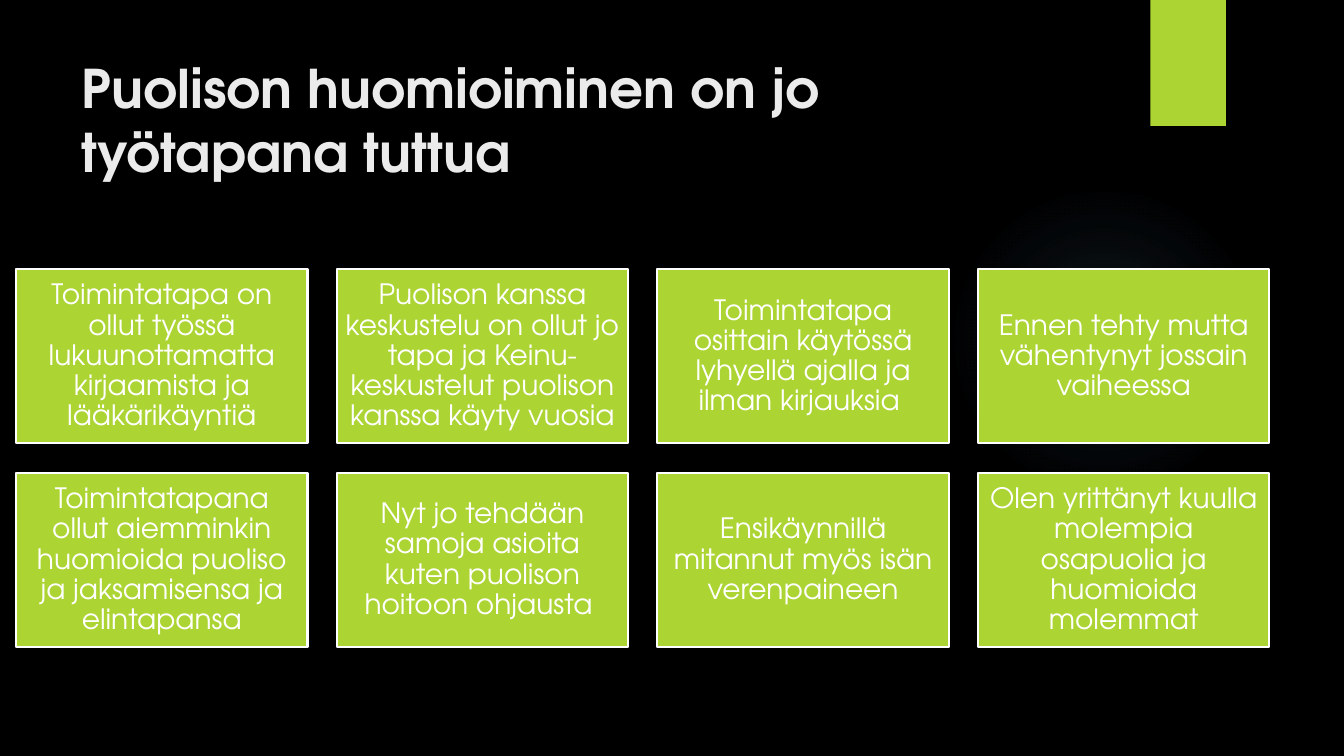
from dataclasses import dataclass

from lxml import etree
from pptx import Presentation
from pptx.dml.color import RGBColor
from pptx.enum.shapes import MSO_SHAPE as Preset
from pptx.enum.text import MSO_ANCHOR as Anchor, PP_ALIGN as Align
from pptx.oxml.ns import qn
from pptx.shapes.autoshape import Shape
from pptx.slide import Slide
from pptx.text.text import TextFrame
from pptx.util import Inches, Pt

FONT = "TeX Gyre Adventor"
BLACK, WHITE, LIGHT = "000000", "FFFFFF", "EBEBEB"
LIME, GLOW_BLUE = "ACD433", "7AC4F0"
COLUMNS = 4
CARD_LEFT, CARD_TOP = 0.16, 2.67
CARD_WIDTH, CARD_HEIGHT, CARD_GAP = 2.89, 1.73, 0.29
GLOW_STOPS = ((0, 7), (36, 6), (69, 0))


@dataclass(frozen=True)
class Box:
    left: float
    top: float
    width: float
    height: float

    def lengths(self) -> tuple[Inches, Inches, Inches, Inches]:
        return (Inches(self.left), Inches(self.top),
                Inches(self.width), Inches(self.height))


@dataclass(frozen=True)
class Card:
    text: str
    box: Box


def color(hex_code: str) -> RGBColor:
    return RGBColor.from_string(hex_code)


def format_text(frame: TextFrame, size: int, hex_code: str, bold: bool) -> None:
    for paragraph in frame.paragraphs:
        for run in paragraph.runs:
            run.font.name = FONT
            run.font.size = Pt(size)
            run.font.bold = bold
            run.font.color.rgb = color(hex_code)


def add_block(slide: Slide, preset: Preset, box: Box, fill: str) -> Shape:
    block = slide.shapes.add_shape(preset, *box.lengths())
    block.shadow.inherit = False
    block.fill.solid()
    block.fill.fore_color.rgb = color(fill)
    block.line.fill.background()
    return block


def add_glow(slide: Slide, box: Box) -> None:
    glow = add_block(slide, Preset.OVAL, box, GLOW_BLUE)
    gradient = etree.Element(qn("a:gradFill"), rotWithShape="1")
    stops = etree.SubElement(gradient, qn("a:gsLst"))
    for position, opacity in GLOW_STOPS:
        stop = etree.SubElement(stops, qn("a:gs"), pos=str(position * 1000))
        tint = etree.SubElement(stop, qn("a:srgbClr"), val=GLOW_BLUE)
        etree.SubElement(tint, qn("a:alpha"), val=str(opacity * 1000))
    path = etree.SubElement(gradient, qn("a:path"), {"path": "circle"})
    etree.SubElement(path, qn("a:fillToRect"),
                     l="50000", t="50000", r="50000", b="50000")
    properties = glow._element.spPr
    properties.replace(properties.find(qn("a:solidFill")), gradient)


def add_title(slide: Slide, text: str, box: Box) -> None:
    title = slide.shapes.title
    title.left, title.top, title.width, title.height = box.lengths()
    frame = title.text_frame
    frame.text = text
    frame.word_wrap = True
    frame.vertical_anchor = Anchor.TOP
    frame.paragraphs[0].alignment = Align.LEFT
    format_text(frame, 38, LIGHT, True)


def add_card(slide: Slide, card: Card) -> None:
    block = add_block(slide, Preset.RECTANGLE, card.box, LIME)
    block.line.color.rgb = color(WHITE)
    block.line.width = Pt(1.5)
    frame = block.text_frame
    frame.text = card.text
    frame.word_wrap = True
    frame.vertical_anchor = Anchor.MIDDLE
    frame.margin_left = frame.margin_right = Inches(0.08)
    frame.margin_top = frame.margin_bottom = Inches(0.08)
    frame.paragraphs[0].alignment = Align.CENTER
    frame.paragraphs[0].line_spacing = 0.9
    format_text(frame, 20, WHITE, False)


def card_box(index: int) -> Box:
    row, column = divmod(index, COLUMNS)
    return Box(CARD_LEFT + column * (CARD_WIDTH + CARD_GAP),
               CARD_TOP + row * (CARD_HEIGHT + CARD_GAP),
               CARD_WIDTH, CARD_HEIGHT)


EXPERIENCES = (
    "Toimintatapa on ollut työssä lukuunottamatta kirjaamista ja lääkärikäyntiä",
    "Puolison kanssa keskustelu on ollut jo tapa ja Keinu- keskustelut "
    "puolison kanssa käyty vuosia",
    "Toimintatapa osittain käytössä lyhyellä ajalla ja ilman kirjauksia ",
    "Ennen tehty mutta vähentynyt jossain vaiheessa",
    "Toimintatapana ollut aiemminkin huomioida puoliso ja jaksamisensa ja "
    "elintapansa",
    "Nyt jo tehdään samoja asioita kuten puolison hoitoon ohjausta ",
    "Ensikäynnillä mitannut myös isän verenpaineen",
    "Olen yrittänyt kuulla molempia osapuolia ja huomioida molemmat",
)


def main() -> None:
    deck = Presentation()
    deck.slide_width, deck.slide_height = Inches(13.33), Inches(7.5)
    slide = deck.slides.add_slide(deck.slide_layouts.get_by_name("Title Only"))
    slide.background.fill.solid()
    slide.background.fill.fore_color.rgb = color(BLACK)

    add_glow(slide, Box(9.41, 1.83, 3.08, 3.08))
    add_block(slide, Preset.RECTANGLE, Box(11.41, 0, 0.75, 1.25), LIME)
    add_title(slide, "Puolison huomioiminen on jo työtapana tuttua",
              Box(0.71, 0.5, 10.2, 1.53))
    for index, text in enumerate(EXPERIENCES):
        add_card(slide, Card(text, card_box(index)))

    deck.save("out.pptx")


if __name__ == "__main__":
    main()
